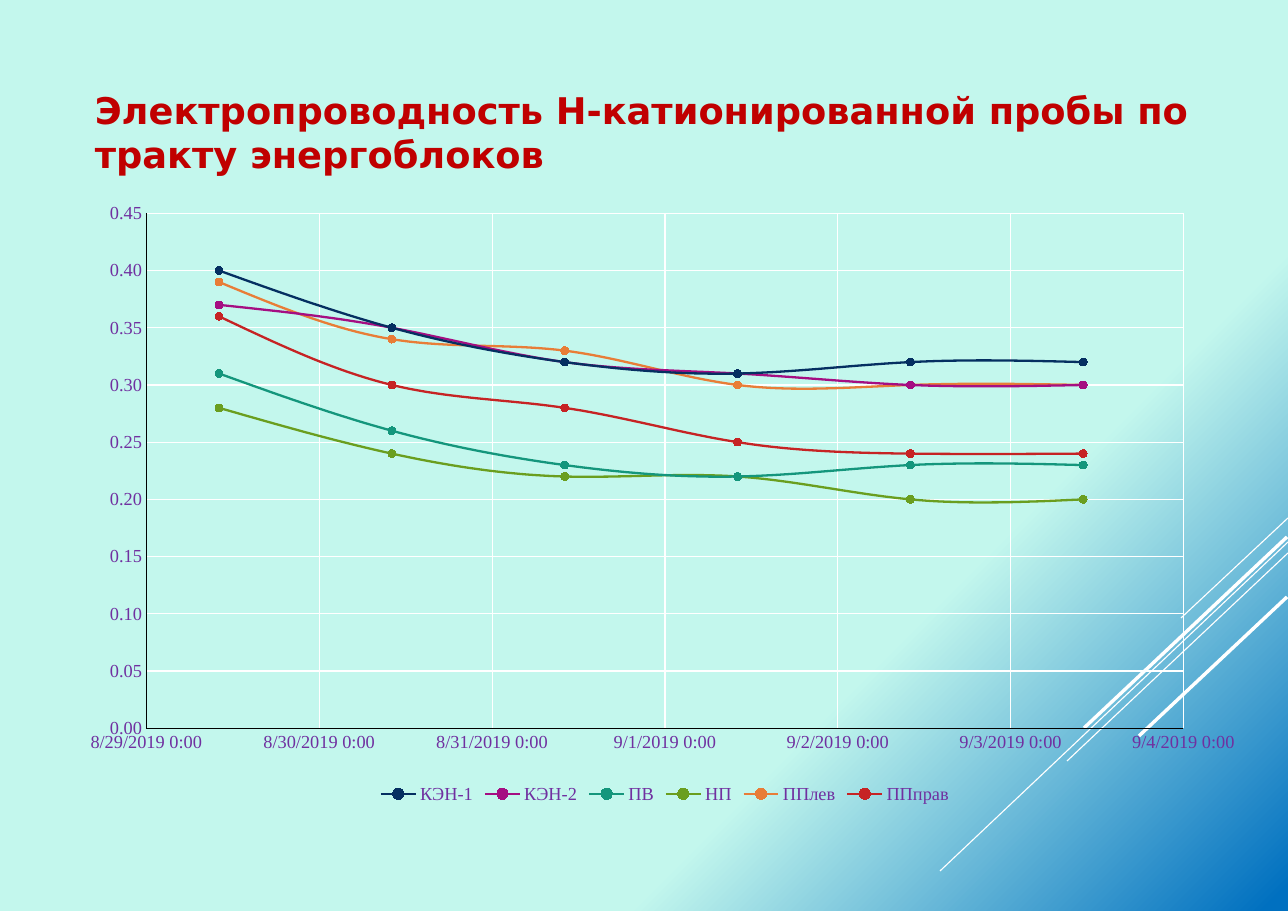
import lxml.etree
import pptx
import pptx.chart.data
import pptx.dml.color
import pptx.enum.chart
import pptx.enum.shapes
import pptx.oxml.ns
import pptx.util

PX = 8298
CHART_FONT = "Times New Roman"
CHART_TEXT = "7030A0"
FIRST_DAY = 43706
SAMPLE_TIME = 0.42
SERIES = [
    ("КЭН-1", "052F61", [0.4, 0.35, 0.32, 0.31, 0.32, 0.32]),
    ("КЭН-2", "A50E82", [0.37, 0.35, 0.32, 0.31, 0.3, 0.3]),
    ("ПВ", "14967C", [0.31, 0.26, 0.23, 0.22, 0.23, 0.23]),
    ("НП", "6A9E1F", [0.28, 0.24, 0.22, 0.22, 0.2, 0.2]),
    ("ППлев", "E87D37", [0.39, 0.34, 0.33, 0.3, 0.3, 0.3]),
    ("ППправ", "C62324", [0.36, 0.3, 0.28, 0.25, 0.24, 0.24]),
]
RAYS = [
    (1288, 518, 1181, 618, 0.75),
    (1288, 542, 940, 871, 0.75),
    (1288, 553, 1067, 761, 0.75),
    (1287, 537, 1084, 728, 2.25),
    (1287, 597, 1139, 736, 2.25),
]


def px(*lengths):
    """Turn pixel lengths into EMU."""
    return [length * PX for length in lengths]


def rgb(value):
    """Turn a hex string into a colour."""
    return pptx.dml.color.RGBColor.from_string(value)


def style_line(line, color, width):
    """Give a line its colour and its width in points."""
    line.color.rgb = rgb(color)
    line.width = pptx.util.Pt(width)


def style_font(font, name, size, color, bold=False):
    """Give a font its face, size, colour and weight."""
    font.name = name
    font.size = pptx.util.Pt(size)
    font.color.rgb = rgb(color)
    font.bold = bold


def paint_background(page):
    """Fill the page with a diagonal gradient."""
    fill = page.background.fill
    fill.gradient()
    fill.gradient_angle = 315
    stops = [("C3F7ED", 0.7), ("0070C0", 0.99)]
    for stop, (color, position) in zip(fill.gradient_stops, stops):
        stop.color.rgb = rgb(color)
        stop.position = position


def add_ray(page, x1, y1, x2, y2, width):
    """Draw one white decorative line."""
    straight = pptx.enum.shapes.MSO_CONNECTOR.STRAIGHT
    ray = page.shapes.add_connector(straight, *px(x1, y1, x2, y2))
    style_line(ray.line, "FFFFFF", width)
    properties = ray.element.find(pptx.oxml.ns.qn("p:spPr"))
    lxml.etree.SubElement(properties, pptx.oxml.ns.qn("a:effectLst"))


def add_text(page, text, left, top, width, height, **font_format):
    """Add a wrapped text box with one formatted paragraph."""
    box = page.shapes.add_textbox(*px(left, top, width, height))
    box.text_frame.word_wrap = True
    span = box.text_frame.paragraphs[0].add_run()
    span.text = text
    style_font(span.font, **font_format)


def style_axis(axis, low, high, step, number_format):
    """Set the scale, labels, line and gridlines of an axis."""
    axis.minimum_scale, axis.maximum_scale, axis.major_unit = low, high, step
    axis.major_tick_mark = pptx.enum.chart.XL_TICK_MARK.NONE
    axis.minor_tick_mark = pptx.enum.chart.XL_TICK_MARK.NONE
    axis.tick_labels.number_format = number_format
    axis.tick_labels.number_format_is_linked = False
    style_font(axis.tick_labels.font, CHART_FONT, 12, CHART_TEXT)
    style_line(axis.format.line, "000000", 0.75)
    axis.has_major_gridlines = True
    style_line(axis.major_gridlines.format.line, "FFFFFF", 0.75)


def style_series(series, color):
    """Give a series its line and round markers."""
    style_line(series.format.line, color, 1.5)
    marker = series.marker
    marker.style = pptx.enum.chart.XL_MARKER_STYLE.CIRCLE
    marker.size = 5
    marker.format.fill.solid()
    marker.format.fill.fore_color.rgb = rgb(color)
    style_line(marker.format.line, color, 0.75)


def place_plot(chart, x, y, w, h):
    """Fix the inner plot area as fractions of the chart."""
    qn = pptx.oxml.ns.qn
    area = next(chart.element.iter(qn("c:plotArea")))
    for old in area.findall(qn("c:layout")):
        area.remove(old)
    layout = lxml.etree.Element(qn("c:layout"))
    area.insert(0, layout)
    manual = lxml.etree.SubElement(layout, qn("c:manualLayout"))
    settings = {"layoutTarget": "inner", "xMode": "edge", "yMode": "edge",
                "x": x, "y": y, "w": w, "h": h}
    for name, value in settings.items():
        lxml.etree.SubElement(manual, qn(f"c:{name}"), val=str(value))


def add_conductivity_chart(page, left, top, width, height):
    """Add the smooth scatter chart of conductivity by date."""
    data = pptx.chart.data.XyChartData(number_format="0.00")
    for name, color, values in SERIES:
        series = data.add_series(name)
        for day, value in enumerate(values):
            series.add_data_point(round(FIRST_DAY + SAMPLE_TIME + day, 2), value)
    kind = pptx.enum.chart.XL_CHART_TYPE.XY_SCATTER_SMOOTH
    chart = page.shapes.add_chart(kind, *px(left, top, width, height), data).chart
    chart.has_title = False
    style_font(chart.font, CHART_FONT, 12, CHART_TEXT)
    chart.has_legend = True
    chart.legend.position = pptx.enum.chart.XL_LEGEND_POSITION.BOTTOM
    chart.legend.include_in_layout = False
    style_font(chart.legend.font, CHART_FONT, 12, CHART_TEXT)
    style_axis(chart.category_axis, FIRST_DAY, FIRST_DAY + 6, 1, "m/d/yyyy h:mm")
    style_axis(chart.value_axis, 0, 0.45, 0.05, "0.00")
    plot = chart.plots[0]
    plot.vary_by_categories = False
    for series, (name, color, values) in zip(plot.series, SERIES):
        style_series(series, color)
    for smooth in chart.element.iter(pptx.oxml.ns.qn("c:smooth")):
        smooth.set("val", "1")
    place_plot(chart, 0.07, 0.03, 0.86, 0.84)


def main():
    """Build and save the slide."""
    deck = pptx.Presentation()
    deck.slide_width, deck.slide_height = px(1288, 911)
    page = deck.slides.add_slide(deck.slide_layouts[6])
    paint_background(page)
    for ray in RAYS:
        add_ray(page, *ray)
    add_conductivity_chart(page, 62, 195, 1206, 613)
    add_text(page, "Электропроводность Н-катионированной пробы по тракту энергоблоков",
             84, 82, 1206, 100, name="DejaVu Sans", size=24, color="C00000", bold=True)
    deck.save("out.pptx")


if __name__ == "__main__":
    main()
